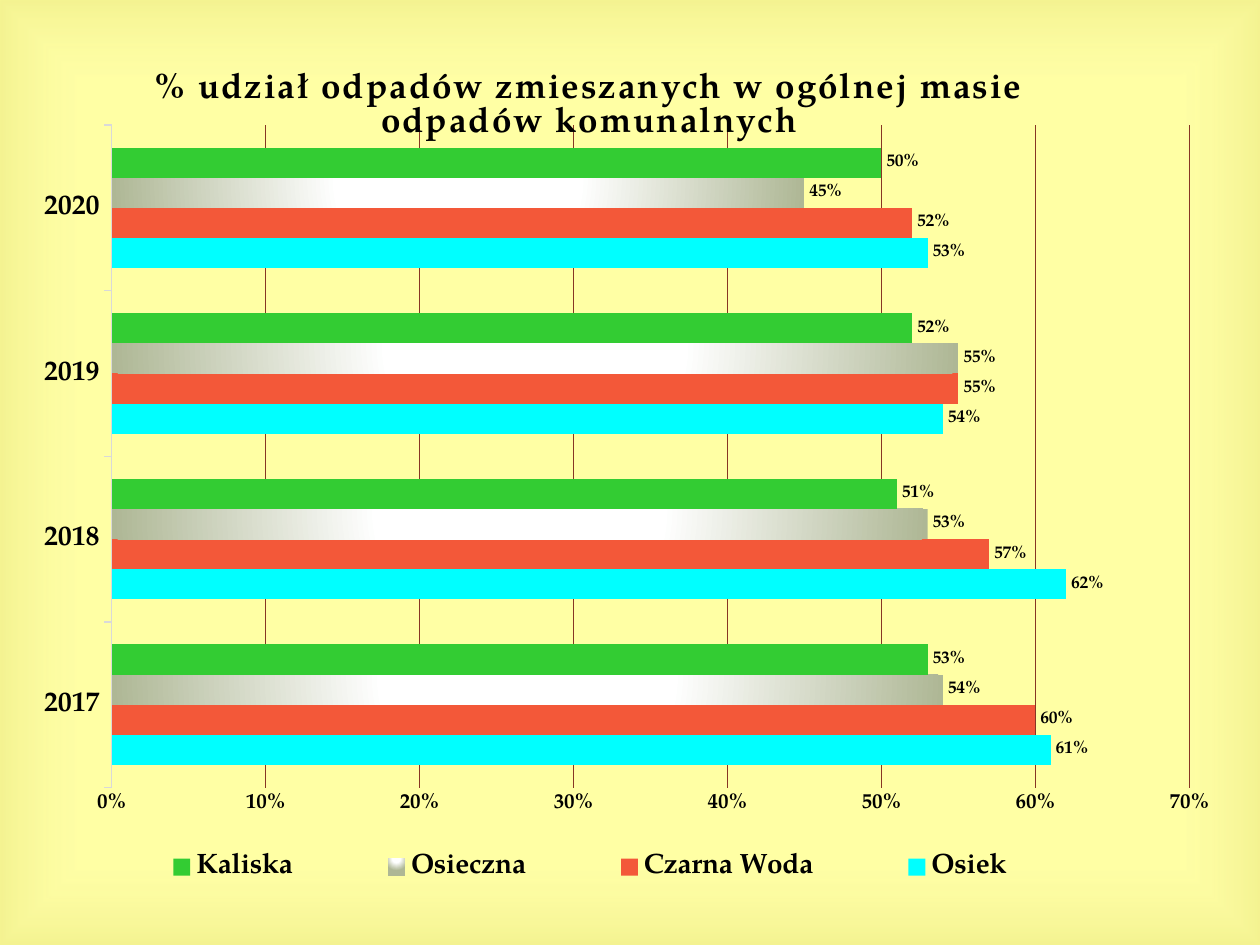
import lxml.etree
import pptx
import pptx.chart.data
import pptx.dml.color
import pptx.enum.chart
import pptx.enum.shapes
import pptx.oxml
import pptx.oxml.ns
import pptx.util
from pptx.util import Cm

FONT = "TeX Gyre Pagella"
COLORS = {
    "background": "FFFF99",
    "glow": "FFFFFF",
    "edge": "D1CA75",
    "text": "000000",
    "axis": "D9D9D9",
    "grid": "873624",
    "Osiek": "00FFFF",
    "Czarna Woda": "F35839",
    "Osieczna": "AEB795",
    "Kaliska": "33CC33",
}
YEARS = ["2017", "2018", "2019", "2020"]
SHARES = {
    "Osiek": [0.61, 0.62, 0.54, 0.53],
    "Czarna Woda": [0.60, 0.57, 0.55, 0.52],
    "Osieczna": [0.54, 0.53, 0.55, 0.45],
    "Kaliska": [0.53, 0.51, 0.52, 0.50],
}
TITLE = "% udział odpadów zmieszanych w ogólnej masie odpadów komunalnych"


def rgb(name):
    return pptx.dml.color.RGBColor.from_string(COLORS[name])


def style_font(font, size, bold=True, color="text"):
    font.name = FONT
    font.size = pptx.util.Pt(size)
    font.bold = bold
    font.color.rgb = rgb(color)


def write_text(text_frame, text, spacing=0, **font_format):
    paragraph = text_frame.paragraphs[0]
    run = paragraph.add_run()
    run.text = text
    style_font(run.font, **font_format)
    run.font._element.set("spc", str(spacing))


def set_gradient(properties, stops, path, focus):
    stop_xml = "".join(
        f'<a:gs pos="{position * 1000}"><a:srgbClr val="{COLORS[color]}">'
        f'<a:alpha val="{alpha * 1000}"/></a:srgbClr></a:gs>'
        for position, color, alpha in stops
    )
    sides = " ".join(f'{side}="{value * 1000}"' for side, value in zip("ltrb", focus))
    gradient = pptx.oxml.parse_xml(
        f'<a:gradFill {pptx.oxml.ns.nsdecls("a")} rotWithShape="1">'
        f'<a:gsLst>{stop_xml}</a:gsLst><a:path path="{path}">'
        f"<a:fillToRect {sides}/></a:path></a:gradFill>"
    )
    solid = properties.find(pptx.oxml.ns.qn("a:solidFill"))
    properties.replace(solid, gradient)


def set_layout(element, position, inner=False, **values):
    for layout in element.findall(pptx.oxml.ns.qn("c:layout")):
        element.remove(layout)
    target = '<c:layoutTarget val="inner"/>' if inner else ""
    modes = '<c:xMode val="edge"/><c:yMode val="edge"/>'
    numbers = "".join(f'<c:{key} val="{value}"/>' for key, value in values.items())
    element.insert(position, pptx.oxml.parse_xml(
        f'<c:layout {pptx.oxml.ns.nsdecls("c")}><c:manualLayout>'
        f"{target}{modes}{numbers}</c:manualLayout></c:layout>"
    ))


def add_background(slide, left, top, width, height):
    slide.background.fill.solid()
    slide.background.fill.fore_color.rgb = rgb("background")
    shape = slide.shapes.add_shape(
        pptx.enum.shapes.MSO_SHAPE.RECTANGLE, left, top, width, height)
    shape.shadow.inherit = False
    shape.line.fill.background()
    shape.fill.solid()
    shape.fill.fore_color.rgb = rgb("glow")
    set_gradient(shape._element.spPr, [(83, "glow", 11), (100, "edge", 23)],
                 "rect", (50, 50, 50, 50))


def style_axes(chart):
    tick_mark = pptx.enum.chart.XL_TICK_MARK
    category_axis = chart.category_axis
    category_axis.major_tick_mark = tick_mark.OUTSIDE
    category_axis.minor_tick_mark = tick_mark.NONE
    category_axis.format.line.color.rgb = rgb("axis")
    category_axis.format.line.width = pptx.util.Pt(0.75)
    style_font(category_axis.tick_labels.font, 16)

    value_axis = chart.value_axis
    value_axis.minimum_scale, value_axis.maximum_scale = 0, 0.7
    value_axis.major_unit = 0.1
    value_axis.major_tick_mark = tick_mark.NONE
    value_axis.minor_tick_mark = tick_mark.NONE
    value_axis.format.line.fill.background()
    value_axis.has_major_gridlines = True
    value_axis.major_gridlines.format.line.color.rgb = rgb("grid")
    value_axis.major_gridlines.format.line.width = pptx.util.Pt(0.75)
    value_axis.tick_labels.number_format = "0%"
    value_axis.tick_labels.number_format_is_linked = False
    style_font(value_axis.tick_labels.font, 12)


def style_series(series):
    series.format.fill.solid()
    series.format.fill.fore_color.rgb = rgb(series.name)
    series.format.line.fill.background()
    series.invert_if_negative = False
    if series.name == "Osieczna":
        set_gradient(series.format.fill._xPr,
                     [(0, "glow", 100), (35, "glow", 100), (100, "Osieczna", 100)],
                     "circle", (50, -80, 50, 180))
    labels = series.data_labels
    labels.show_value = True
    labels.number_format = "0%"
    labels.number_format_is_linked = False
    labels.position = pptx.enum.chart.XL_LABEL_POSITION.OUTSIDE_END
    style_font(labels.font, 10)


def add_share_chart(slide, left, top, width, height):
    data = pptx.chart.data.CategoryChartData(number_format="0%")
    data.categories = YEARS
    for name, values in SHARES.items():
        data.add_series(name, values)
    chart = slide.shapes.add_chart(
        pptx.enum.chart.XL_CHART_TYPE.BAR_CLUSTERED,
        left, top, width, height, data).chart
    style_font(chart.font, 10, bold=False)

    chart.has_title = True
    write_text(chart.chart_title.text_frame, TITLE, size=20, spacing=100)
    set_layout(chart.chart_title._element, 1, x=0.11, y=0.03)

    plot = chart.plots[0]
    plot.gap_width = 150
    plot.overlap = 0
    plot.vary_by_categories = False
    for series in plot.series:
        style_series(series)
    style_axes(chart)
    set_layout(chart._chartSpace.chart.plotArea, 0, inner=True,
               x=0.08, y=0.1, w=0.89, h=0.75)

    chart.has_legend = True
    chart.legend.position = pptx.enum.chart.XL_LEGEND_POSITION.BOTTOM
    chart.legend.include_in_layout = False
    style_font(chart.legend.font, 16)
    set_layout(chart.legend._element, 1, x=0.06, y=0.9, w=0.83, h=0.08)


def main():
    presentation = pptx.Presentation()
    presentation.slide_width = Cm(25.4)
    presentation.slide_height = Cm(19.05)
    slide = presentation.slides.add_slide(presentation.slide_layouts[6])
    add_background(slide, 0, 0, presentation.slide_width, presentation.slide_height)
    add_share_chart(slide, Cm(0.3), Cm(0.74), Cm(24.41), Cm(17.81))
    presentation.save("out.pptx")


if __name__ == "__main__":
    main()
